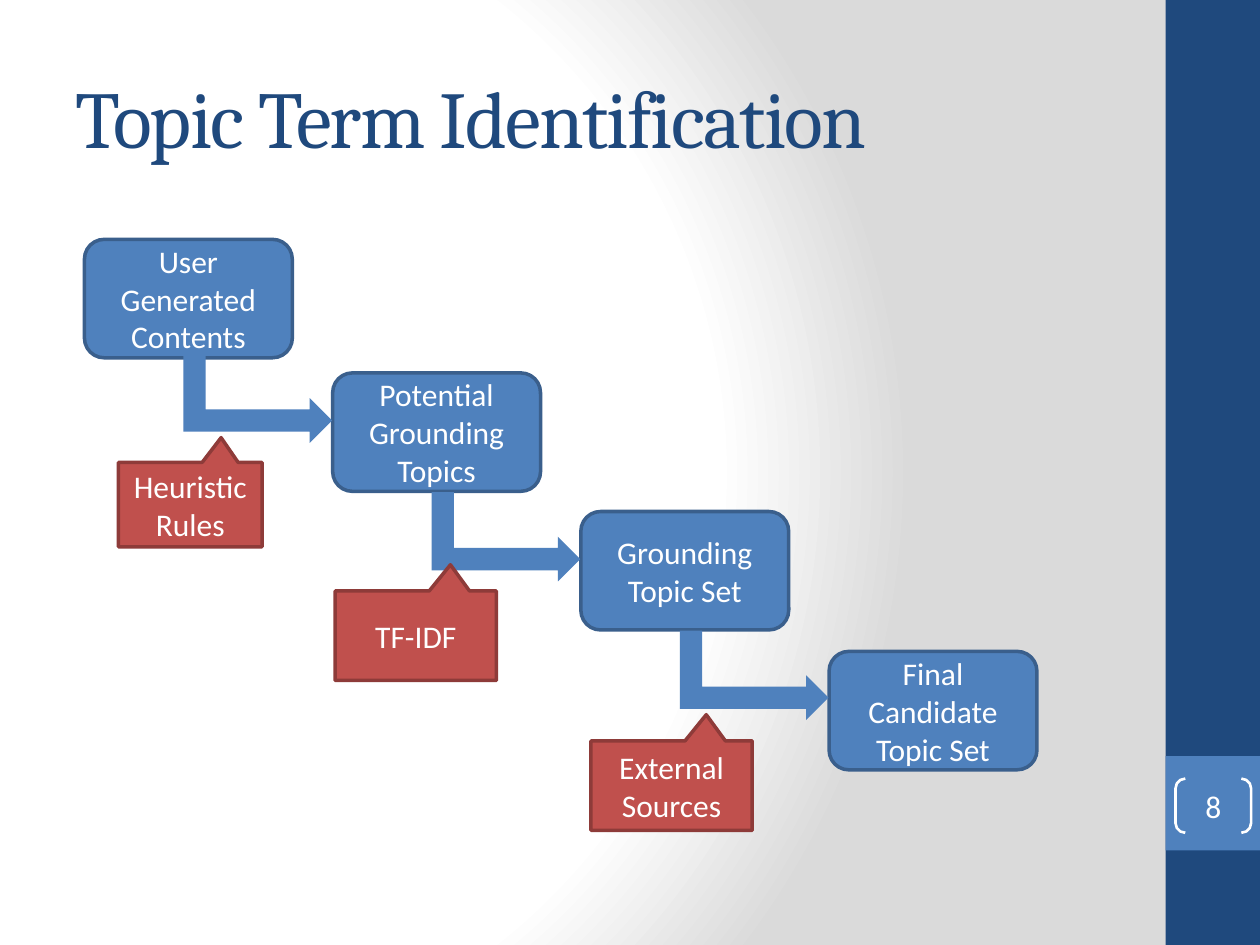
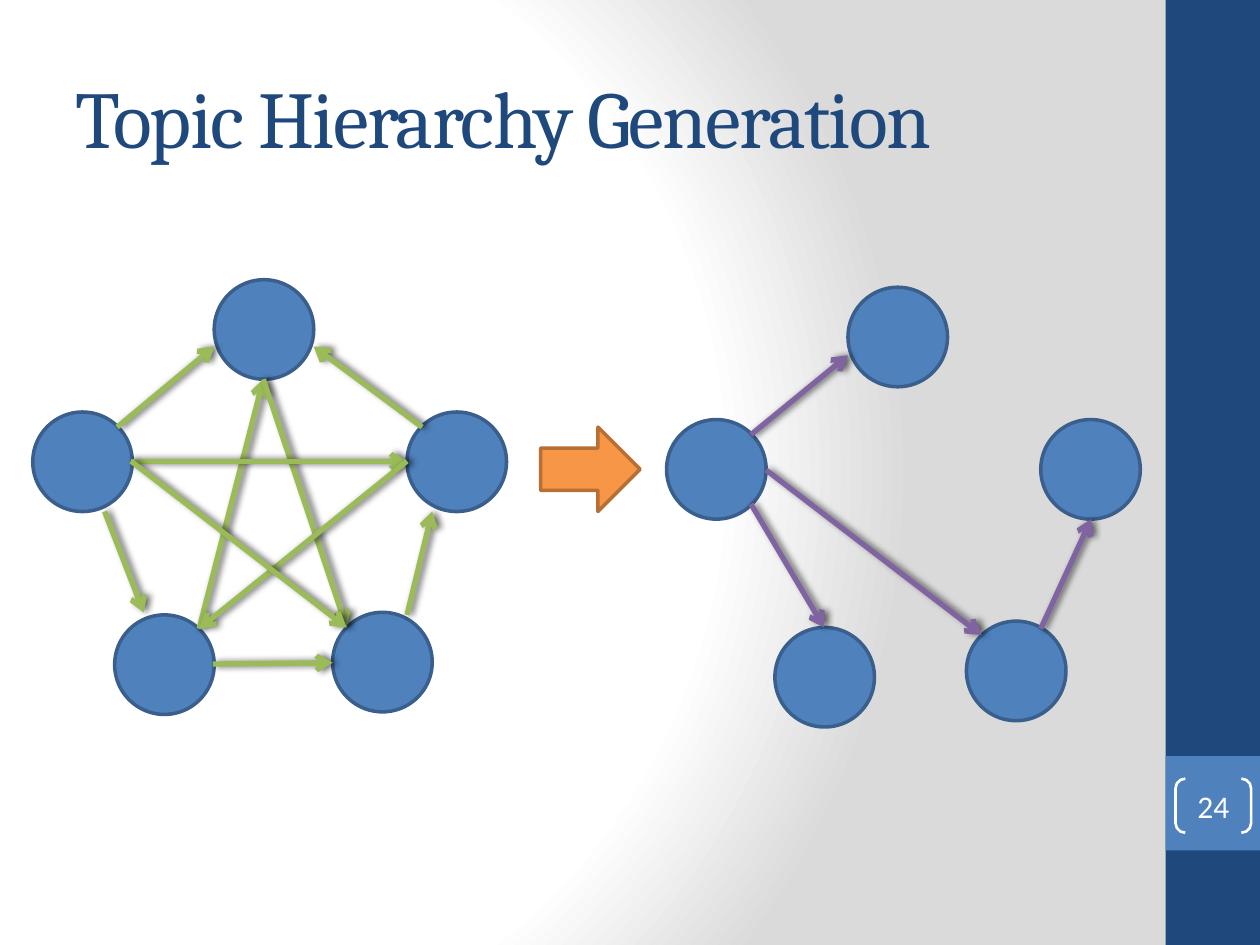
import dataclasses

import pptx
import pptx.dml.color
import pptx.enum.shapes
import pptx.enum.text
import pptx.oxml
import pptx.oxml.ns
import pptx.util

Inches = pptx.util.Inches
Pt = pptx.util.Pt
RGB = pptx.dml.color.RGBColor.from_string
SHAPE = pptx.enum.shapes.MSO_SHAPE
NS = pptx.oxml.ns.nsdecls("a")


@dataclasses.dataclass(frozen=True)
class Theme:
    navy: str = "1F497D"
    blue: str = "4F81BD"
    blue_edge: str = "3A5F8C"
    red: str = "C0504D"
    red_edge: str = "8E3B39"
    orange: str = "F79646"
    orange_edge: str = "B76F34"
    green: str = "9BBB59"
    purple: str = "8064A2"
    white: str = "FFFFFF"
    grey: str = "DADADA"
    title_font: str = "Cambria"
    body_font: str = "Calibri"
    title_size: float = 46
    body_size: float = 18
    edge_width: float = 2
    arrow_width: float = 3


theme = Theme()


def add_shape(s, kind, box, fill=None, line=None, text="", width=theme.edge_width):
    sp = s.shapes.add_shape(kind, *(Inches(v) for v in box))
    sp.shadow.inherit = False
    if fill:
        sp.fill.solid()
        sp.fill.fore_color.rgb = RGB(fill)
    else:
        sp.fill.background()
    if line:
        sp.line.color.rgb = RGB(line)
        sp.line.width = Pt(width)
    else:
        sp.line.fill.background()
    if text:
        tf = sp.text_frame
        tf.word_wrap = True
        tf.vertical_anchor = pptx.enum.text.MSO_ANCHOR.MIDDLE
        p = tf.paragraphs[0]
        p.text = text
        p.alignment = pptx.enum.text.PP_ALIGN.CENTER
        r = p.runs[0]
        r.font.name = theme.body_font
        r.font.size = Pt(theme.body_size)
        r.font.color.rgb = RGB(theme.white)
    return sp


def add_arrow(s, start, end, color):
    c = s.shapes.add_connector(
        pptx.enum.shapes.MSO_CONNECTOR.STRAIGHT, *(Inches(v) for v in start + end)
    )
    c.line.color.rgb = RGB(color)
    c.line.width = Pt(theme.arrow_width)
    spPr = c.element.spPr
    ln = spPr.find(pptx.oxml.ns.qn("a:ln"))
    ln.append(pptx.oxml.parse_xml(f'<a:tailEnd {NS} type="arrow"/>'))
    spPr.append(pptx.oxml.parse_xml(
        f'<a:effectLst {NS}><a:outerShdw blurRad="{Pt(4)}" dist="{Pt(2)}" dir="0" rotWithShape="0">'
        '<a:srgbClr val="000000"><a:alpha val="60000"/></a:srgbClr>'
        '</a:outerShdw></a:effectLst>'
    ))


prs = pptx.Presentation()
prs.slide_width = Inches(10)
prs.slide_height = Inches(7.5)
layout = prs.slide_layouts.get_by_name("Title Only")

layout.background.fill.gradient()
grad = next(layout.element.iter(pptx.oxml.ns.qn("a:gradFill")))
stops = "".join(
    f'<a:gs pos="{pos * 1000}"><a:srgbClr val="{color}"/></a:gs>'
    for pos, color in ((0, theme.white), (75, theme.white), (100, theme.grey))
)
grad.getparent().replace(grad, pptx.oxml.parse_xml(
    f'<a:gradFill {NS} rotWithShape="1"><a:gsLst>{stops}</a:gsLst><a:path path="circle">'
    '<a:fillToRect l="20000" t="50000" r="100000" b="50000"/></a:path></a:gradFill>'
))

slides = []
for title, number in (("Topic Term Identification", "8"), ("Topic Hierarchy Generation", "24")):
    s = prs.slides.add_slide(layout)
    slides.append(s)
    sp = s.shapes.title
    sp.left, sp.top, sp.width, sp.height = (Inches(v) for v in (0.5, 0.3, 8.33, 1.25))
    tf = sp.text_frame
    tf.text = title
    tf.vertical_anchor = pptx.enum.text.MSO_ANCHOR.MIDDLE
    p = tf.paragraphs[0]
    p.alignment = pptx.enum.text.PP_ALIGN.LEFT
    r = p.runs[0]
    r.font.name = theme.title_font
    r.font.size = Pt(theme.title_size)
    r.font.color.rgb = RGB(theme.navy)
    r.font.element.set("spc", "-100") if hasattr(r.font, "element") else r._r.get_or_add_rPr().set("spc", "-100")

    sp = add_shape(s, SHAPE.DOUBLE_BRACKET, (9.33, 6.18, 0.6, 0.43),
                   line=theme.white, text=number, width=1.5)
    sp.adjustments[0] = 0.18
    tf = sp.text_frame
    tf.margin_left = tf.margin_right = tf.margin_top = tf.margin_bottom = 0

flow, graphs = slides

bands = (((9.25, 0, 0.75, 7.5), theme.navy), ((9.25, 6, 0.75, 0.75), theme.blue))
for i, (box, color) in enumerate(bands):
    band = add_shape(flow, SHAPE.RECTANGLE, box, color)
    layout.shapes.element.insert(2 + i, band.element)

steps = (
    ("User Generated Contents", 1.9),
    ("Potential Grounding Topics", 2.96),
    ("Grounding Topic Set", 4.06),
    ("Final Candidate Topic Set", 5.17),
)
step_left, step_pitch = 0.67, 1.97
for i, (text, top) in enumerate(steps):
    add_shape(flow, SHAPE.ROUNDED_RECTANGLE, (step_left + i * step_pitch, top, 1.65, 0.94),
              theme.blue, theme.blue_edge, text)

for i in range(len(steps) - 1):
    sp = add_shape(flow, SHAPE.BENT_UP_ARROW, (1.69 + i * step_pitch, 2.57 + i * 1.1, 0.71, 1.18),
                   theme.blue)
    sp.rotation = 90

methods = (
    ("Heuristic Rules", (0.94, 3.67, 1.14, 0.67)),
    ("TF-IDF", (2.66, 4.69, 1.28, 0.71)),
    ("External Sources", (4.69, 5.88, 1.28, 0.71)),
)
for text, box in methods:
    sp = add_shape(flow, SHAPE.RECTANGULAR_CALLOUT, box, theme.red, theme.red_edge, text)
    sp.adjustments[0], sp.adjustments[1] = 0.215, -0.793

full_nodes = ((1.7, 2.22), (3.23, 3.27), (2.64, 4.86), (0.91, 4.88), (0.26, 3.27))
full_edges = (
    ((0.93, 3.39), (1.7, 2.75)),
    ((0.83, 4.06), (1.14, 4.86)),
    ((1.69, 5.27), (2.64, 5.26)),
    ((3.23, 4.88), (3.43, 4.06)),
    ((3.35, 3.39), (2.49, 2.75)),
    ((1.58, 4.99), (2.09, 3.01)),
    ((2.09, 3.01), (2.75, 4.98)),
    ((1.04, 3.66), (3.23, 3.66)),
    ((3.23, 3.66), (1.58, 4.99)),
    ((1.04, 3.66), (2.75, 4.98)),
)
tree_nodes = ((6.73, 2.28), (8.26, 3.33), (7.67, 4.93), (6.15, 4.98), (5.29, 3.33))
tree_edges = (
    ((5.96, 3.45), (6.73, 2.82)),
    ((5.96, 4), (6.54, 4.98)),
    ((8.26, 4.99), (8.66, 4.12)),
    ((6.08, 3.73), (7.79, 5.04)),
)
node_size = 0.79
for nodes, edges, color in ((full_nodes, full_edges, theme.green),
                            (tree_nodes, tree_edges, theme.purple)):
    for node in nodes:
        add_shape(graphs, SHAPE.OVAL, node + (node_size, node_size), theme.blue, theme.blue_edge)
    for start, end in edges:
        add_arrow(graphs, start, end, color)

add_shape(graphs, SHAPE.RIGHT_ARROW, (4.29, 3.39, 0.79, 0.67), theme.orange, theme.orange_edge)

prs.save("out.pptx")
